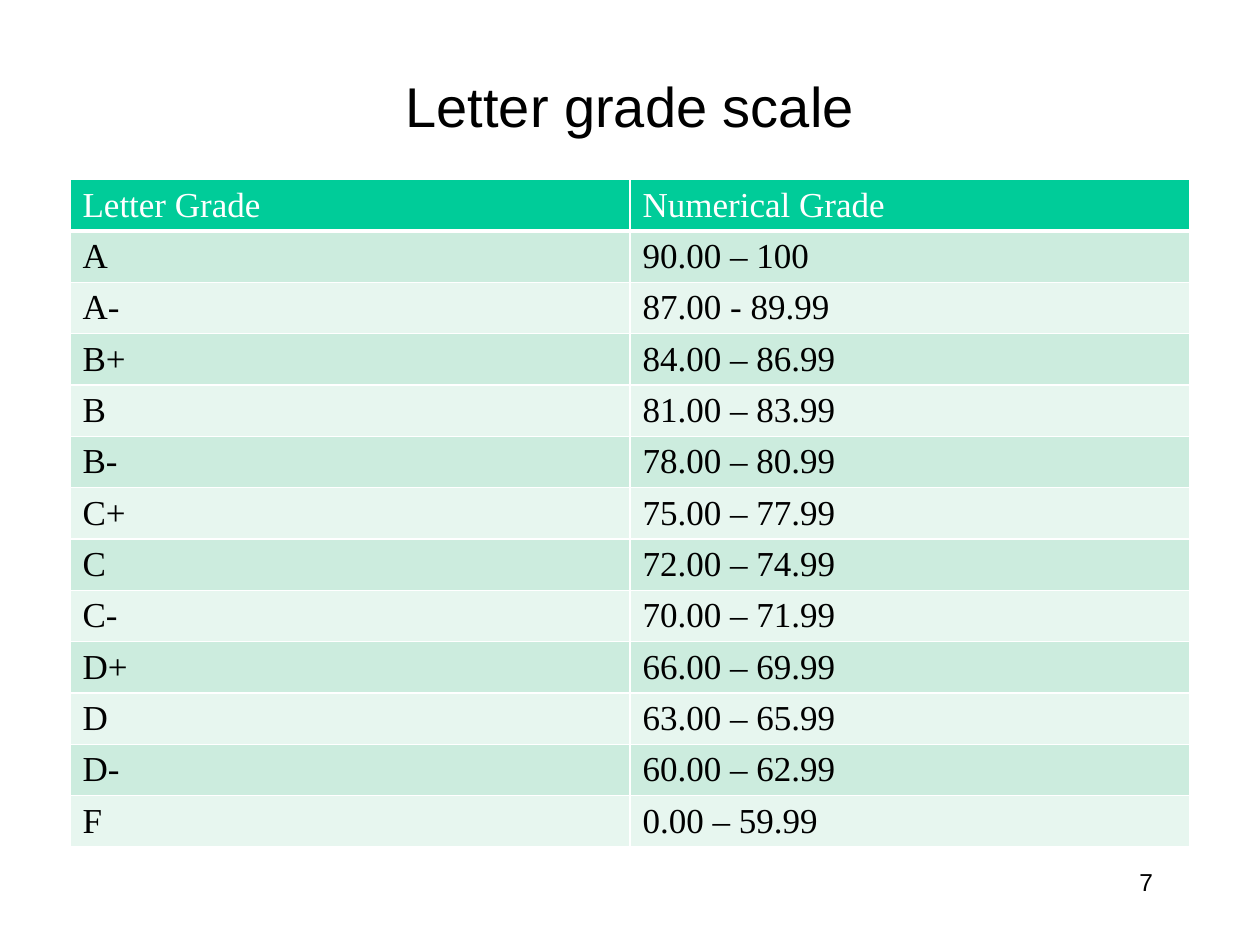
import pptx
import pptx.util
import pptx.dml.color
import pptx.enum.text
import lxml.etree
from pptx.oxml.ns import qn

COLORS = {"header": "00CC99", "odd": "CCECDE", "even": "E7F6EF",
          "white": "FFFFFF", "black": "000000"}
GRADES = [
    ("Letter Grade", "Numerical Grade"),
    ("A", "90.00 – 100"),
    ("A-", "87.00 - 89.99"),
    ("B+", "84.00 – 86.99"),
    ("B", "81.00 – 83.99"),
    ("B-", "78.00 – 80.99"),
    ("C+", "75.00 – 77.99"),
    ("C", "72.00 – 74.99"),
    ("C-", "70.00 – 71.99"),
    ("D+", "66.00 – 69.99"),
    ("D", "63.00 – 65.99"),
    ("D-", "60.00 – 62.99"),
    ("F", "0.00 – 59.99"),
]
ALIGN = pptx.enum.text.PP_ALIGN
MIDDLE = pptx.enum.text.MSO_ANCHOR.MIDDLE


def write(frame, text, font, size, color, align):
    frame.text = text
    para = frame.paragraphs[0]
    para.alignment = align
    para.font.name = font
    para.font.size = pptx.util.Pt(size)
    para.font.color.rgb = pptx.dml.color.RGBColor.from_string(COLORS[color])


def add_border(cell, side, points):
    line = lxml.etree.SubElement(cell._tc.get_or_add_tcPr(), qn("a:" + side),
                                 w=str(pptx.util.Pt(points)))
    fill = lxml.etree.SubElement(line, qn("a:solidFill"))
    lxml.etree.SubElement(fill, qn("a:srgbClr"), val=COLORS["white"])


deck = pptx.Presentation()
deck.slide_width = pptx.util.Inches(10)
deck.slide_height = pptx.util.Inches(7.5)
page = deck.slides.add_slide(deck.slide_layouts[5])
width, height = deck.slide_width, deck.slide_height
side_margin = int(width * 0.075)

# Title
title = page.shapes.title
title.left, title.top = side_margin, int(height / 18)
title.width, title.height = width - 2 * side_margin, int(height / 9)
title.text_frame.vertical_anchor = MIDDLE
write(title.text_frame, "Letter grade scale", "Arial", 32, "black", ALIGN.CENTER)

# Grade table, centred across the page
table_width = int(width * 8 / 9)
row_height = pptx.util.Inches(5.3 / len(GRADES))
table = page.shapes.add_table(
    len(GRADES), 2, (width - table_width) // 2, int(height * 0.19),
    table_width, row_height * len(GRADES)).table
for row, texts in enumerate(GRADES):
    table.rows[row].height = row_height
    band = "header" if row == 0 else "odd" if row % 2 else "even"
    for column, text in enumerate(texts):
        cell = table.cell(row, column)
        cell.margin_top = cell.margin_bottom = pptx.util.Inches(0.04)
        cell.vertical_anchor = MIDDLE
        write(cell.text_frame, text, "Times New Roman", 20,
              "black" if row else "white", ALIGN.LEFT)
        for side in ("lnL", "lnR", "lnT", "lnB"):
            add_border(cell, side, 3 if row == 0 and side == "lnB" else 1)
        cell.fill.solid()
        cell.fill.fore_color.rgb = pptx.dml.color.RGBColor.from_string(COLORS[band])

# Page number, flush with the title's right edge
number_width = int(width * 5 / 24)
number = page.shapes.add_textbox(
    width - side_margin - number_width, int(height * 0.911),
    number_width, int(height / 15))
number.text_frame.word_wrap = True
write(number.text_frame, "7", "Arial", 14, "black", ALIGN.RIGHT)

deck.save("out.pptx")
